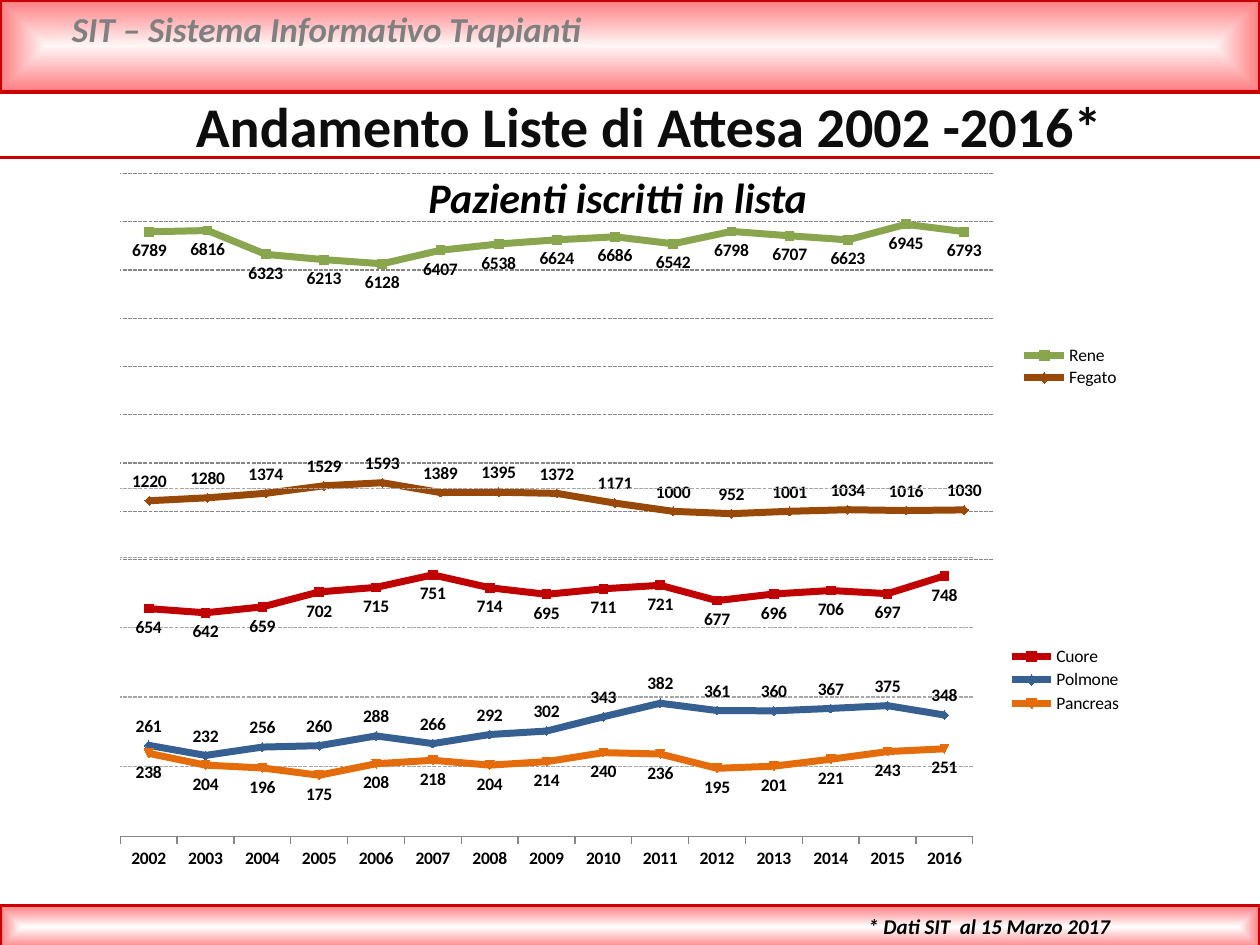
import dataclasses

import lxml.etree
import pptx
import pptx.chart.data
import pptx.dml.color
import pptx.enum.chart
import pptx.enum.dml
import pptx.enum.shapes
import pptx.enum.text
import pptx.oxml.ns
import pptx.util

Pt = pptx.util.Pt
qn = pptx.oxml.ns.qn
Label = pptx.enum.chart.XL_LABEL_POSITION
Align = pptx.enum.text.PP_ALIGN


@dataclasses.dataclass(frozen=True)
class Theme:
    font: str = "Calibri"
    black: str = "000000"
    title_ink: str = "0D0D0D"
    header_ink: str = "808080"
    red: str = "CC0000"
    band_edge: str = "FF7C80"
    header_center: str = "FFF6F6"
    footer_center: str = "FFFFFF"
    grid: str = "A6A6A6"
    axis: str = "868686"
    kidney: str = "89A54E"
    liver: str = "984807"
    heart: str = "C00000"
    lung: str = "376092"
    pancreas: str = "E46C0A"
    title_size: int = 32
    subtitle_size: int = 24
    header_size: int = 20
    footer_size: int = 12
    chart_size: int = 10
    rule_width: float = 2
    series_width: float = 4


def rgb(value):
    return pptx.dml.color.RGBColor.from_string(value)


def child(parent, tag, **attributes):
    return lxml.etree.SubElement(parent, qn(tag), attributes)


def set_layout(part, x, y, width, height, inner=False):
    """Place a plot area or legend by fractions of its chart."""
    for old in part.findall(qn("c:layout")):
        part.remove(old)
    layout = part.makeelement(qn("c:layout"))
    manual = child(layout, "c:manualLayout")
    if inner:
        child(manual, "c:layoutTarget", val="inner")
    for name in ("xMode", "yMode"):
        child(manual, f"c:{name}", val="edge")
    for name, value in zip("xywh", (x, y, width, height)):
        child(manual, f"c:{name}", val=str(value))
    position = part.find(qn("c:legendPos"))
    if position is None:
        part.insert(0, layout)
    else:
        position.addnext(layout)


class SlideBuilder:
    def __init__(self, slide, theme):
        self.slide = slide
        self.theme = theme

    def fill_text(self, box, text, size, color, align=Align.LEFT, italic=True):
        frame = box.text_frame
        frame.word_wrap = True
        frame.auto_size = pptx.enum.text.MSO_AUTO_SIZE.SHAPE_TO_FIT_TEXT
        frame.vertical_anchor = pptx.enum.text.MSO_ANCHOR.TOP
        para = frame.paragraphs[0]
        para.text = text
        para.alignment = align
        font = para.font
        font.name, font.size = self.theme.font, Pt(size)
        font.bold, font.italic = True, italic
        font.color.rgb = rgb(color)

    def title(self, text, left, top, width, height):
        box = self.slide.shapes.title
        box.left, box.top, box.width, box.height = map(Pt, (left, top, width, height))
        self.fill_text(box, text, self.theme.title_size, self.theme.title_ink,
                       Align.CENTER, False)

    def text(self, text, left, top, width, height, size, color, align=Align.LEFT):
        box = self.slide.shapes.add_textbox(*map(Pt, (left, top, width, height)))
        self.fill_text(box, text, size, color, align)

    def band(self, top, height, center):
        band = self.slide.shapes.add_shape(
            pptx.enum.shapes.MSO_SHAPE.RECTANGLE, 0, Pt(top), Pt(720), Pt(height))
        band.shadow.inherit = False
        band.line.color.rgb = rgb(self.theme.red)
        band.line.width = Pt(self.theme.rule_width)
        band.fill.gradient()
        for stop, color in zip(band.fill.gradient_stops, (center, self.theme.band_edge)):
            stop.color.rgb = rgb(color)
        # Make the gradient follow the rectangle from its middle
        gradient = band._element.spPr.find(qn("a:gradFill"))
        gradient.remove(gradient.find(qn("a:lin")))
        route = child(gradient, "a:path", path="shape")
        child(route, "a:fillToRect", l="50000", t="50000", r="50000", b="50000")

    def rule(self, top):
        line = self.slide.shapes.add_connector(
            pptx.enum.shapes.MSO_CONNECTOR.STRAIGHT, 0, Pt(top), Pt(720), Pt(top))
        line.line.color.rgb = rgb(self.theme.red)
        line.line.width = Pt(self.theme.rule_width)
        child(line._element.spPr, "a:effectLst")

    def line_chart(self, frame, years, series, maximum, step, grid, plot_at, legend_at,
                   show_axes):
        """Each series is (name, color, label position, values)."""
        theme = self.theme
        data = pptx.chart.data.CategoryChartData()
        data.categories = years
        for name, _, _, values in series:
            data.add_series(name, values)
        chart = self.slide.shapes.add_chart(
            pptx.enum.chart.XL_CHART_TYPE.LINE_MARKERS, *map(Pt, frame), data).chart
        chart.has_title = False
        chart.font.name, chart.font.size = theme.font, Pt(theme.chart_size)
        chart.font.color.rgb = rgb(theme.black)

        # Axes and grid
        values_axis, years_axis = chart.value_axis, chart.category_axis
        values_axis.minimum_scale, values_axis.maximum_scale = 0, maximum
        values_axis.major_unit = step
        values_axis.tick_label_position = pptx.enum.chart.XL_TICK_LABEL_POSITION.NONE
        values_axis.format.line.fill.background()
        values_axis.has_major_gridlines = True
        line = values_axis.major_gridlines.format.line
        line.color.rgb, line.width = rgb(grid), Pt(0.75)
        line.dash_style = pptx.enum.dml.MSO_LINE.SQUARE_DOT
        values_axis.visible = years_axis.visible = show_axes
        years_axis.tick_labels.font.bold = True
        years_axis.format.line.color.rgb = rgb(theme.axis)

        # Series
        plot = chart.plots[0]
        plot.vary_by_categories = False
        for item, (_, color, position, _) in zip(plot.series, series):
            item.smooth = False
            item.format.line.color.rgb = rgb(color)
            item.format.line.width = Pt(theme.series_width)
            item.marker.style = pptx.enum.chart.XL_MARKER_STYLE.AUTOMATIC
            item.marker.size = 5
            item.marker.format.fill.solid()
            item.marker.format.fill.fore_color.rgb = rgb(color)
            item.marker.format.line.color.rgb = rgb(color)
            labels = item.data_labels
            labels.show_value, labels.position = True, position
            labels.font.bold, labels.font.size = True, Pt(theme.chart_size)

        # Legend, layout and clear background
        chart.has_legend = True
        chart.legend.position = pptx.enum.chart.XL_LEGEND_POSITION.RIGHT
        chart.legend.include_in_layout = False
        space = chart._chartSpace
        set_layout(space.chart.plotArea, *plot_at, inner=True)
        set_layout(chart.legend._element, *legend_at)
        background = space.makeelement(qn("c:spPr"))
        child(background, "a:noFill")
        child(child(background, "a:ln"), "a:noFill")
        space.chart.addnext(background)


def main():
    theme = Theme()
    deck = pptx.Presentation()
    deck.slide_width, deck.slide_height = Pt(720), Pt(540)
    page = SlideBuilder(deck.slides.add_slide(deck.slide_layouts[5]), theme)

    # Header and footer
    page.band(0, 52.5, theme.header_center)
    page.text("SIT – Sistema Informativo Trapianti", 34, 1, 646, 32,
              theme.header_size, theme.header_ink)
    page.band(517.5, 24.5, theme.footer_center)
    page.rule(90)
    page.text("* Dati SIT  al 15 Marzo 2017", 489, 518.5, 231, 21.5,
              theme.footer_size, theme.black)

    # Titles
    page.title("Andamento Liste di Attesa 2002 -2016*", 82, 48.5, 578, 46)
    page.text("Pazienti iscritti in lista", 201, 94.5, 304, 36.5,
              theme.subtitle_size, theme.black, Align.CENTER)

    # Waiting lists, large above and small below
    years = [str(year) for year in range(2002, 2017)]
    page.line_chart((57, 94.5, 587, 230), years, [
        ("Rene", theme.kidney, Label.BELOW,
         (6789, 6816, 6323, 6213, 6128, 6407, 6538, 6624, 6686, 6542, 6798, 6707, 6623,
          6945, 6793)),
        ("Fegato", theme.liver, Label.ABOVE,
         (1220, 1280, 1374, 1529, 1593, 1389, 1395, 1372, 1171, 1000, 952, 1001, 1034,
          1016, 1030)),
    ], 8000, 1000, theme.axis, (0.02, 0.02, 0.85, 0.96), (0.89, 0.44, 0.12, 0.12), False)
    page.line_chart((57, 274.5, 587, 226), years, [
        ("Cuore", theme.heart, Label.BELOW,
         (654, 642, 659, 702, 715, 751, 714, 695, 711, 721, 677, 696, 706, 697, 748)),
        ("Polmone", theme.lung, Label.ABOVE,
         (261, 232, 256, 260, 288, 266, 292, 302, 343, 382, 361, 360, 367, 375, 348)),
        ("Pancreas", theme.pancreas, Label.BELOW,
         (238, 204, 196, 175, 208, 218, 204, 214, 240, 236, 195, 201, 221, 243, 251)),
    ], 1000, 200, theme.grid, (0.02, 0.02, 0.83, 0.88), (0.88, 0.41, 0.12, 0.19), True)

    deck.save("out.pptx")


if __name__ == "__main__":
    main()
